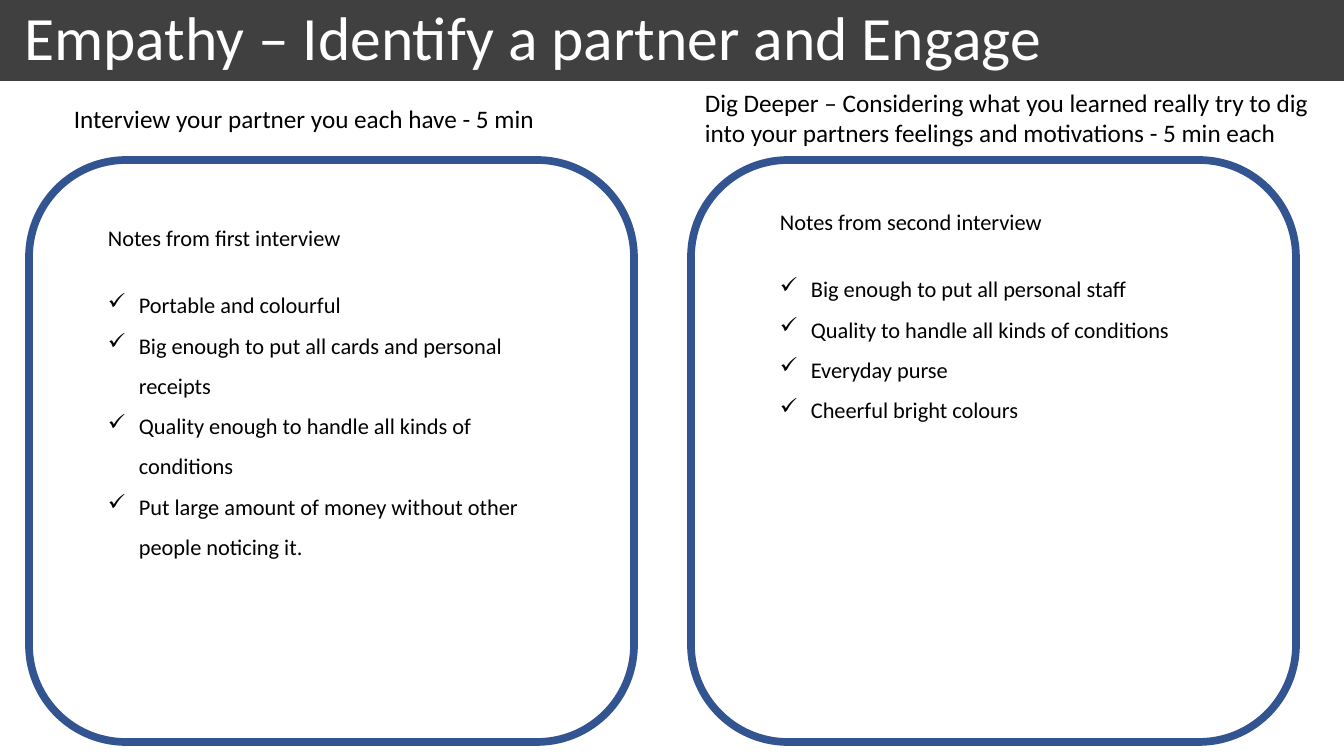
from lxml import etree
from pptx import Presentation
from pptx.dml.color import RGBColor
from pptx.enum.shapes import MSO_SHAPE
from pptx.enum.text import MSO_ANCHOR, MSO_AUTO_SIZE, PP_ALIGN
from pptx.oxml.ns import qn
from pptx.util import Pt

RECT, ROUNDED = MSO_SHAPE.RECTANGLE, MSO_SHAPE.ROUNDED_RECTANGLE
MIDDLE, LEFT = MSO_ANCHOR.MIDDLE, PP_ALIGN.LEFT
GROW = MSO_AUTO_SIZE.SHAPE_TO_FIT_TEXT

THEME = {
    "font": "Calibri",
    "bar": RGBColor(0x40, 0x40, 0x40),
    "frame": RGBColor(0x32, 0x54, 0x91),
    "light": RGBColor(0xFF, 0xFF, 0xFF),
    "dark": RGBColor(0, 0, 0),
    "title": Pt(44),
    "heading": Pt(18),
    "notes": Pt(16),
    "frame_line": Pt(5.5),
    "notes_gap": Pt(19.5),
}
PX_PER_INCH = 100.8


def px(length):
    return round(length * 914400 / PX_PER_INCH)


def write(paragraph, text, size, color):
    paragraph.text = text
    paragraph.alignment = LEFT
    font = paragraph.runs[0].font
    font.name, font.size = THEME["font"], size
    font.color.rgb = color


prs = Presentation()
prs.slide_width, prs.slide_height = px(1344), px(756)
slide = prs.slides.add_slide(prs.slide_layouts[6])
shapes = slide.shapes

# Title bar
title_bar = shapes.add_shape(RECT, 0, 0, px(1344), px(81))
title_bar.shadow.inherit = False
title_bar.fill.solid()
title_bar.fill.fore_color.rgb = THEME["bar"]
title_bar.line.fill.background()
title_frame = title_bar.text_frame
title_frame.margin_left = px(24)
title_frame.vertical_anchor = MIDDLE
title = title_frame.paragraphs[0]
write(title, "Empathy – Identify a partner and Engage", THEME["title"], THEME["light"])
title.line_spacing = 0.9

# Interviews: frame left, heading box, notes box, wording
interviews = [
    (29, (64, 98, 586, 40), (98, 219, 462, 404),
     "Interview your partner you each have - 5 min",
     "Notes from first interview",
     ["Portable and colourful",
      "Big enough to put all cards and personal receipts",
      "Quality enough to handle all kinds of conditions",
      "Put large amount of money without other people noticing it."]),
    (691, (695, 82, 633, 72), (770, 203, 491, 228),
     "Dig Deeper – Considering what you learned really try to dig into your "
     "partners feelings and motivations - 5 min each",
     "Notes from second interview",
     ["Big enough to put all personal staff",
      "Quality to handle all kinds of conditions",
      "Everyday purse",
      "Cheerful bright colours"]),
]

for frame_left, heading_box, notes_box, heading, notes_title, findings in interviews:
    # Rounded frame
    frame = shapes.add_shape(ROUNDED, px(frame_left), px(160), px(605), px(582))
    frame.shadow.inherit = False
    frame.fill.background()
    frame.line.color.rgb = THEME["frame"]
    frame.line.width = THEME["frame_line"]

    # Heading and notes
    heading_text, notes = [
        shapes.add_textbox(*map(px, box)).text_frame for box in (heading_box, notes_box)
    ]
    for text_frame in (heading_text, notes):
        text_frame.word_wrap = True
        text_frame.auto_size = GROW
    write(heading_text.paragraphs[0], heading, THEME["heading"], THEME["dark"])
    write(notes.paragraphs[0], notes_title, THEME["notes"], THEME["dark"])
    notes.paragraphs[0].space_after = THEME["notes_gap"]

    # Ticked findings
    for finding in findings:
        item = notes.add_paragraph()
        write(item, finding, THEME["notes"], THEME["dark"])
        item.line_spacing = 1.5
        properties = item._p.get_or_add_pPr()
        properties.set("marL", str(px(31)))
        properties.set("indent", str(-px(31)))
        etree.SubElement(properties, qn("a:buChar")).set("char", "✓")

prs.save("out.pptx")
